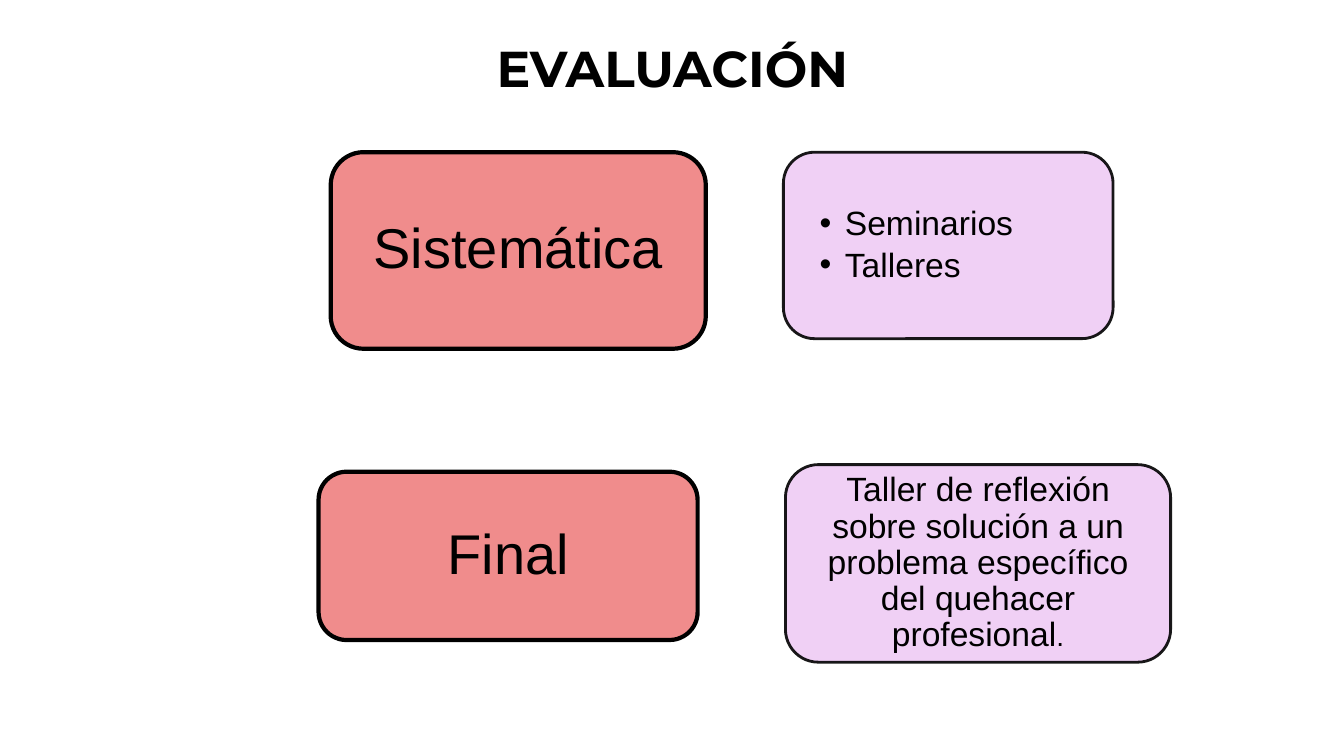
"""Build the EVALUACIÓN slide: two kinds of assessment and what each consists of."""
from dataclasses import dataclass

import pptx
import pptx.dml.color
import pptx.enum.shapes
import pptx.enum.text
import pptx.oxml.ns
import pptx.util
from lxml import etree

PX = 9144


@dataclass(frozen=True)
class Theme:
    """Colours, fonts and type sizes of the slide."""
    ink: str = "000000"
    kind: str = "F08C8C"
    detail: str = "EFCBF5"
    heading_font: str = "Montserrat"
    body_font: str = "Arial"
    title: int = 36
    label: int = 40
    body: int = 24
    small: int = 20


THEME = Theme()


def px(n):
    """Turn px into EMU."""
    return pptx.util.Emu(n * PX)


def rgb(color):
    """Turn a hex string into a colour."""
    return pptx.dml.color.RGBColor.from_string(color)


def add_child(parent, tag, **attrs):
    """Append a DrawingML element with attributes."""
    return etree.SubElement(parent, pptx.oxml.ns.qn(tag), attrs)


def set_alpha(fill_parent, percent):
    """Make the solid fill below an element partly transparent."""
    clr = fill_parent.find(pptx.oxml.ns.qn("a:solidFill"))[0]
    add_child(clr, "a:alpha", val=str(percent * 1000))


def set_bullet(p, indent):
    """Give a paragraph a hanging round bullet."""
    pPr = p._p.get_or_add_pPr()
    pPr.set("marL", str(px(indent)))
    pPr.set("indent", str(-px(indent)))
    add_child(pPr, "a:buFont", typeface="Arial")
    add_child(pPr, "a:buChar", char="•")


def write(tf, paragraphs, size, font=THEME.body_font, bold=False, bullet=False,
          line_spacing=None, space_after=None, margins=(10, 5)):
    """Fill a text frame; each paragraph is a list of (text, size or None) runs."""
    tf.word_wrap = True
    tf.vertical_anchor = pptx.enum.text.MSO_ANCHOR.MIDDLE
    tf.margin_left = tf.margin_right = px(margins[0])
    tf.margin_top = tf.margin_bottom = px(margins[1])
    align = pptx.enum.text.PP_ALIGN
    for i, runs in enumerate(paragraphs):
        p = tf.add_paragraph() if i else tf.paragraphs[0]
        p.alignment = align.LEFT if bullet else align.CENTER
        if line_spacing:
            p.line_spacing = line_spacing
        if space_after:
            p.space_after = pptx.util.Pt(space_after)
        if bullet:
            set_bullet(p, 25)
        for text, run_size in runs:
            r = p.add_run()
            r.text = text
            r.font.name = font
            r.font.size = pptx.util.Pt(run_size or size)
            r.font.bold = bold
            r.font.color.rgb = rgb(THEME.ink)


def add_title(s, box, text):
    """Add the slide heading."""
    sp = s.shapes.add_textbox(*map(px, box))
    write(sp.text_frame, [[(text, None)]], THEME.title, font=THEME.heading_font, bold=True)


def add_card(s, box, fill, line_width, paragraphs, size, alpha=None, **fmt):
    """Add a rounded card holding text."""
    kind = pptx.enum.shapes.MSO_SHAPE.ROUNDED_RECTANGLE
    sp = s.shapes.add_shape(kind, *map(px, box))
    sp.shadow.inherit = False
    sp.fill.solid()
    sp.fill.fore_color.rgb = rgb(fill)
    sp.line.color.rgb = rgb(THEME.ink)
    sp.line.width = pptx.util.Pt(line_width)
    if alpha:
        set_alpha(sp._element.spPr, alpha)
        set_alpha(sp.line._get_or_add_ln(), alpha)
    write(sp.text_frame, paragraphs, size, line_spacing=0.9, **fmt)


def add_kind(s, box, text):
    """Add a red card naming a kind of assessment."""
    add_card(s, box, THEME.kind, 3, [[(text, None)]], THEME.label, margins=(17, 8))


def add_detail(s, box, paragraphs, **fmt):
    """Add a lilac card describing a kind of assessment."""
    add_card(s, box, THEME.detail, 2, paragraphs, THEME.body, alpha=90, **fmt)


def main():
    """Build and save the slide."""
    prs = pptx.Presentation()
    prs.slide_width, prs.slide_height = px(1333), px(750)
    s = prs.slides.add_slide(prs.slide_layouts[6])
    add_title(s, (446, 31, 456, 71), "EVALUACIÓN ")
    add_detail(s, (777, 151, 327, 185), [[("Seminarios", None)], [("Talleres", None)]],
               bullet=True, space_after=4, margins=(27, 14))
    add_kind(s, (328, 151, 372, 195), "Sistemática")
    add_kind(s, (316, 468, 376, 167), "Final")
    workshop = "Taller de reflexión sobre solución a un problema específico del quehacer profesional"
    add_detail(s, (779, 461, 382, 196), [[(workshop, None), (".", THEME.small)]])
    prs.save("out.pptx")


if __name__ == "__main__":
    main()
